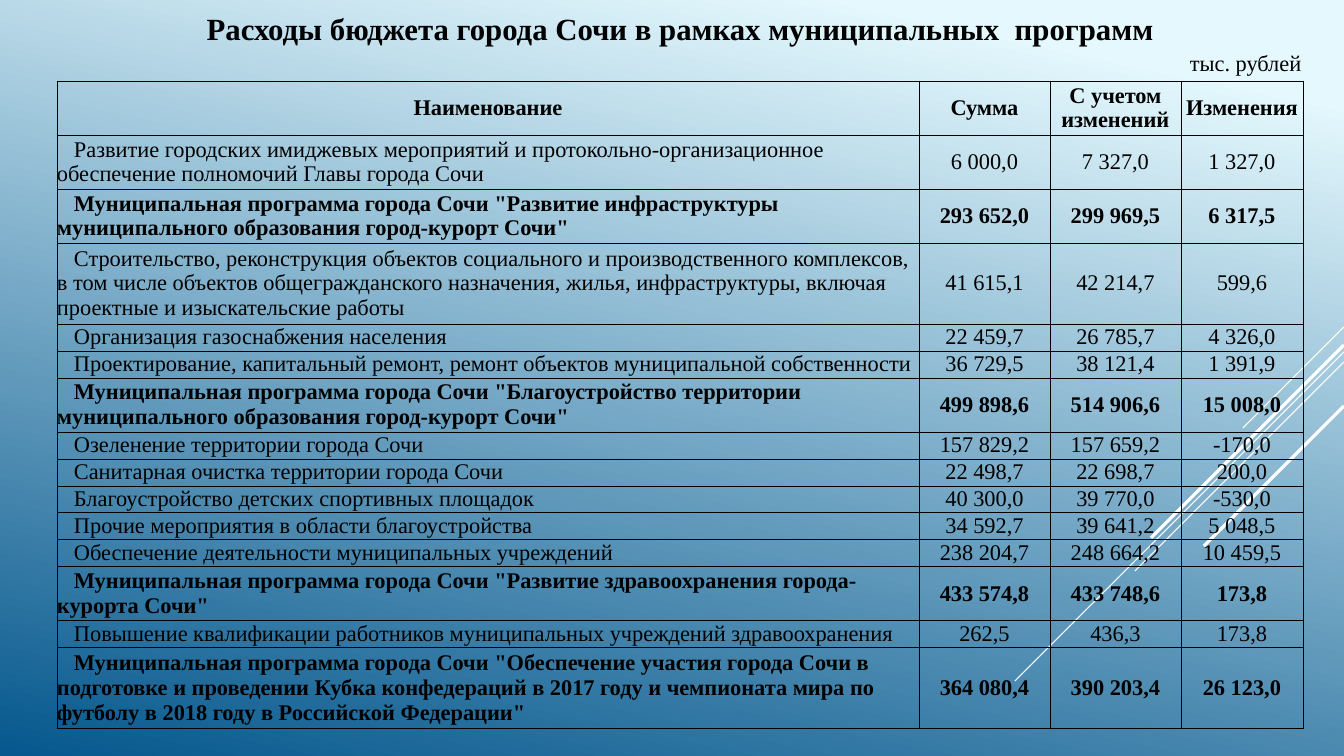
import pptx
import pptx.dml.color
import pptx.enum.shapes
import pptx.enum.text
import pptx.oxml
import pptx.oxml.ns
import pptx.util

BLACK = pptx.dml.color.RGBColor(0x00, 0x00, 0x00)
WHITE = pptx.dml.color.RGBColor(0xFF, 0xFF, 0xFF)
SKY = pptx.dml.color.RGBColor(0xE4, 0xF8, 0xFD)
SEA = pptx.dml.color.RGBColor(0x06, 0x58, 0x8E)

CENTER = pptx.enum.text.PP_ALIGN.CENTER
LEFT = pptx.enum.text.PP_ALIGN.LEFT
TOP = pptx.enum.text.MSO_ANCHOR.TOP
MIDDLE = pptx.enum.text.MSO_ANCHOR.MIDDLE

WIDTH, HEIGHT = 1344, 756
LINE_HEIGHT = 27
COLUMN_WIDTHS = (862, 131, 131, 122)
PROGRAM = "Муниципальная программа"

# Right-edge start height, 45-degree run and weight of each streak
STREAKS = [(327, 101, 0.75), (352, 329, 0.75), (362, 209, 0.75),
           (345, 193, 2.25), (406, 140, 2.25)]

# Number of text lines in the row, then its cells
BUDGET = [
    (2, "Наименование", "Сумма", "С учетом изменений", "Изменения"),
    (2, "Развитие городских имиджевых мероприятий и протокольно-организационное "
        "обеспечение полномочий Главы города Сочи", "6 000,0", "7 327,0", "1 327,0"),
    (2, 'Муниципальная программа города Сочи "Развитие инфраструктуры '
        'муниципального образования город-курорт Сочи"',
     "293 652,0", "299 969,5", "6 317,5"),
    (3, "Строительство, реконструкция объектов социального и производственного "
        "комплексов, в том числе объектов общегражданского назначения, жилья, "
        "инфраструктуры, включая проектные и изыскательские работы",
     "41 615,1", "42 214,7", "599,6"),
    (1, "Организация газоснабжения населения", "22 459,7", "26 785,7", "4 326,0"),
    (1, "Проектирование, капитальный ремонт, ремонт объектов муниципальной "
        "собственности", "36 729,5", "38 121,4", "1 391,9"),
    (2, 'Муниципальная программа города Сочи "Благоустройство территории '
        'муниципального образования город-курорт Сочи"',
     "499 898,6", "514 906,6", "15 008,0"),
    (1, "Озеленение территории города Сочи", "157 829,2", "157 659,2", "-170,0"),
    (1, "Санитарная очистка территории города Сочи", "22 498,7", "22 698,7", "200,0"),
    (1, "Благоустройство детских спортивных площадок",
     "40 300,0", "39 770,0", "-530,0"),
    (1, "Прочие мероприятия в области благоустройства",
     "34 592,7", "39 641,2", "5 048,5"),
    (1, "Обеспечение деятельности муниципальных учреждений",
     "238 204,7", "248 664,2", "10 459,5"),
    (2, 'Муниципальная программа города Сочи "Развитие здравоохранения '
        'города-курорта Сочи"', "433 574,8", "433 748,6", "173,8"),
    (1, "Повышение квалификации работников муниципальных учреждений "
        "здравоохранения", "262,5", "436,3", "173,8"),
    (3, 'Муниципальная программа города Сочи "Обеспечение участия города Сочи в '
        'подготовке и проведении Кубка конфедераций в 2017 году и чемпионата мира '
        'по футболу в 2018 году в Российской Федерации"',
     "364 080,4", "390 203,4", "26 123,0"),
]


def px(length):
    return pptx.util.Emu(round(length * 914400 / 100.8))


class BudgetSlide:
    font_name = "Times New Roman"
    body_size = 16

    def __init__(self, presentation):
        self.slide = presentation.slides.add_slide(presentation.slide_layouts[5])

    def background(self, start, end):
        fill = self.slide.background.fill
        fill.gradient()
        fill.gradient_angle = 258
        for stop, color, position in zip(fill.gradient_stops, (start, end), (0.1, 1)):
            stop.color.rgb = color
            stop.position = position

    def set_text(self, frame, text, align, size=body_size, bold=False):
        frame.text = text
        frame.word_wrap = True
        paragraph = frame.paragraphs[0]
        paragraph.alignment = align
        font = paragraph.runs[0].font
        font.name = self.font_name
        font.size = pptx.util.Pt(size)
        font.bold = bold
        font.color.rgb = BLACK
        return paragraph

    def title(self, text, left, top, width, height):
        heading = self.slide.shapes.title
        heading.left, heading.top = px(left), px(top)
        heading.width, heading.height = px(width), px(height)
        self.set_text(heading.text_frame, text, CENTER, 22, True)
        heading.text_frame.vertical_anchor = TOP

    def label(self, text, left, top, width, height):
        box = self.slide.shapes.add_textbox(px(left), px(top), px(width), px(height))
        self.set_text(box.text_frame, text, LEFT)

    def streak(self, top, run, weight):
        line = self.slide.shapes.add_connector(
            pptx.enum.shapes.MSO_CONNECTOR.STRAIGHT,
            px(WIDTH), px(top), px(WIDTH - run), px(top + run))
        line.line.color.rgb = WHITE
        line.line.width = pptx.util.Pt(weight)
        line._element.spPr.append(pptx.oxml.parse_xml(
            f"<a:effectLst {pptx.oxml.ns.nsdecls('a')}/>"))

    def borders(self, cell):
        properties = cell._tc.get_or_add_tcPr()
        for side in ("lnL", "lnR", "lnT", "lnB"):
            properties.append(pptx.oxml.parse_xml(
                f"<a:{side} {pptx.oxml.ns.nsdecls('a')} w='6350'><a:solidFill>"
                f"<a:srgbClr val='{BLACK}'/></a:solidFill></a:{side}>"))

    def table(self, rows, left, top):
        height = LINE_HEIGHT * sum(row[0] for row in rows)
        table = self.slide.shapes.add_table(
            len(rows), len(COLUMN_WIDTHS), px(left), px(top),
            px(sum(COLUMN_WIDTHS)), px(height)).table
        table.first_row = table.horz_banding = False
        for column, width in zip(table.columns, COLUMN_WIDTHS):
            column.width = px(width)
        for r, (lines, *texts) in enumerate(rows):
            table.rows[r].height = px(LINE_HEIGHT * lines)
            bold = r == 0 or texts[0].startswith(PROGRAM)
            for c, text in enumerate(texts):
                cell = table.cell(r, c)
                cell.margin_left = cell.margin_right = 0
                cell.margin_top = cell.margin_bottom = 0
                cell.vertical_anchor = MIDDLE
                is_name = r > 0 and c == 0
                paragraph = self.set_text(cell.text_frame, text,
                                          LEFT if is_name else CENTER, bold=bold)
                if is_name:
                    paragraph._p.get_or_add_pPr().set("indent", str(px(17)))
                self.borders(cell)
                cell.fill.background()


def main():
    presentation = pptx.Presentation()
    presentation.slide_width, presentation.slide_height = px(WIDTH), px(HEIGHT)
    budget = BudgetSlide(presentation)

    # Backdrop
    budget.background(SKY, SEA)
    for streak in STREAKS:
        budget.streak(*streak)

    # Heading and unit
    budget.title("Расходы бюджета города Сочи в рамках муниципальных  программ",
                 195, 5, 970, 47)
    budget.label("тыс. рублей", 1180, 44, 152, 37)

    # Spending by programme
    budget.table(BUDGET, 57, 81)
    presentation.save("out.pptx")


if __name__ == "__main__":
    main()
